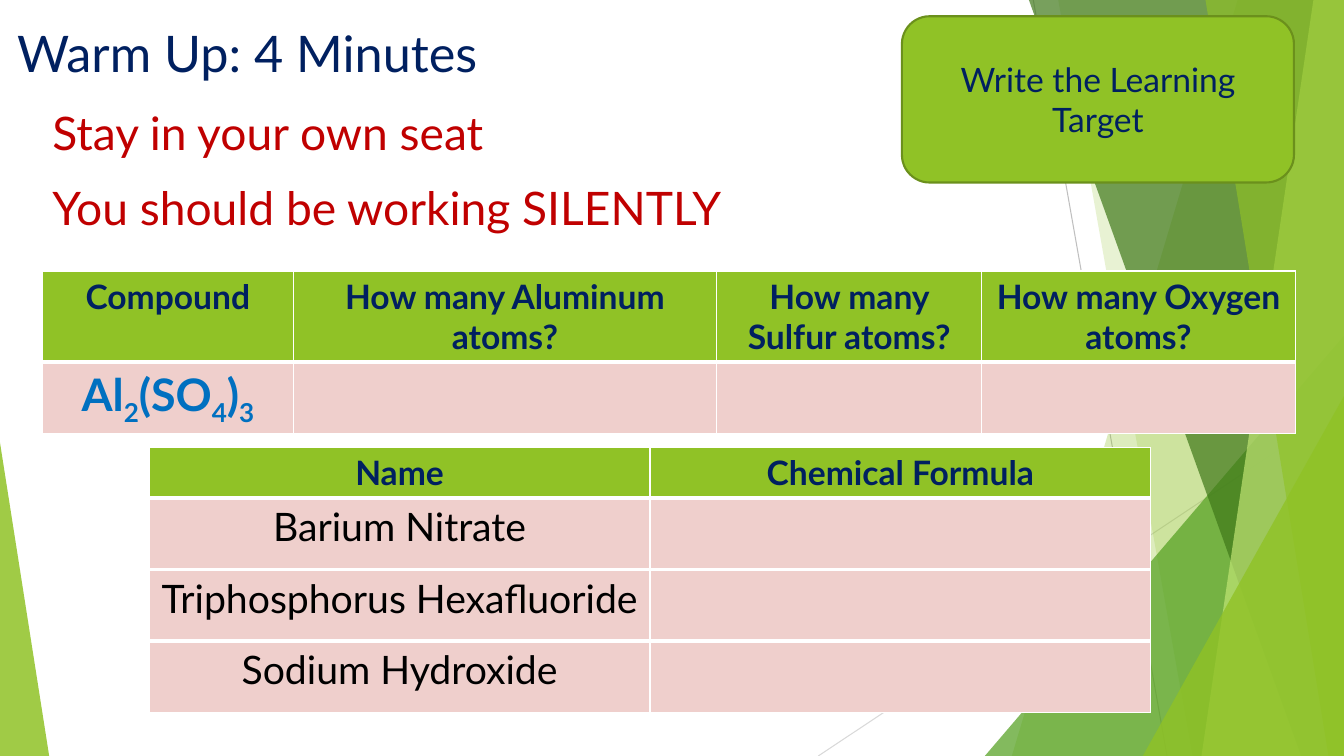
from dataclasses import dataclass

from lxml.etree import SubElement as Sub
from pptx import Presentation
from pptx.dml.color import RGBColor as Color
from pptx.enum.shapes import MSO_CONNECTOR as Link
from pptx.enum.shapes import MSO_SHAPE as Form
from pptx.enum.text import MSO_ANCHOR as Anchor
from pptx.enum.text import PP_ALIGN as Align
from pptx.oxml.ns import qn
from pptx.shapes.base import BaseShape as Shape
from pptx.slide import Slide
from pptx.table import _Cell as Cell
from pptx.text.text import TextFrame as Frame
from pptx.util import Cm, Pt

WIDTH, HEIGHT = 33.87, 19.05
FONT = "Lato"
WHITE = Color(255, 255, 255)
BLACK = Color(0, 0, 0)
NAVY = Color(0x00, 0x20, 0x60)
RED = Color(0xC0, 0x00, 0x00)
BLUE = Color(0x00, 0x70, 0xC0)
LIME = Color(0x90, 0xC2, 0x26)
OLIVE = Color(0x6B, 0x90, 0x1C)
GREEN = Color(0x54, 0xA0, 0x21)
FOREST = Color(0x3F, 0x78, 0x19)
PALE = Color(0xC0, 0xE4, 0x74)
PINK = Color(0xEF, 0xCF, 0xCC)
GREY = Color(0xBF, 0xBF, 0xBF)
SILVER = Color(0xD9, 0xD9, 0xD9)


@dataclass
class Line:
    start: tuple[float, float]
    end: tuple[float, float]
    color: Color


@dataclass
class Facet:
    top: float
    base: float
    color: Color
    alpha: int


@dataclass
class Wedge:
    left: float
    top: float
    width: float
    peak: float
    color: Color
    alpha: int


@dataclass
class Run:
    text: str
    size: float
    color: Color
    bold: bool = False
    sub: bool = False


@dataclass
class Label:
    left: float
    top: float
    width: float
    height: float
    run: Run


@dataclass
class Grid:
    left: float
    top: float
    widths: list[float]
    heights: list[float]
    rows: list[list[list[Run]]]


def head(text: str) -> list[Run]:
    return [Run(text, 24, NAVY, True)]


def name(text: str) -> list[Run]:
    return [Run(text, 28, BLACK)]


PARTS = [("Al", False), ("2", True), ("(SO", False), ("4", True), (")", False), ("3", True)]
SALT = [Run(text, 32, BLUE, True, sub) for text, sub in PARTS]

LINES = [
    Line((26.04, 0), (29.41, HEIGHT), GREY),
    Line((WIDTH, 10.24), (20.62, HEIGHT), SILVER),
]
PANES = [
    Facet(31.19, 25.5, LIME, 30),
    Facet(26.67, 30.05, LIME, 20),
    Wedge(24.82, 8.46, 9.05, 1, GREEN, 72),
    Facet(25.93, 32.79, FOREST, 70),
    Facet(33.1, 30.28, PALE, 70),
    Facet(30.38, 33.48, LIME, 65),
    Wedge(28.8, 9.98, 5.07, 1, LIME, 80),
    Wedge(0, 11.15, 1.24, 0, LIME, 85),
]
LABELS = [
    Label(0.18, 0.43, 22, 2, Run("Warm Up: 4 Minutes", 36, NAVY)),
    Label(1.07, 4.39, 18.5, 2.08, Run("You should be working SILENTLY", 33, RED)),
    Label(1.07, 2.51, 18.5, 2.08, Run("Stay in your own seat", 33, RED)),
]
TARGET = Label(22.73, 0.41, 9.88, 4.19, Run("Write the Learning Target", 24, NAVY))
GRIDS = [
    Grid(1.07, 6.83, [6.32, 10.67, 6.68, 7.9], [2.27, 1.79], [
        [head("Compound"), head("How many Aluminum atoms?"),
         head("How many Sulfur atoms?"), head("How many Oxygen atoms?")],
        [SALT, [], [], []],
    ]),
    Grid(3.76, 11.28, [12.62, 12.62], [1.27, 1.8, 1.8, 1.8], [
        [head("Name"), head("Chemical Formula")],
        [name("Barium Nitrate"), []],
        [name("Triphosphorus Hexafluoride"), []],
        [name("Sodium Hydroxide"), []],
    ]),
]


def write(frame: Frame, runs: list[Run], align: Align) -> None:
    frame.word_wrap = True
    para = frame.paragraphs[0]
    para.alignment = align
    for item in runs:
        run = para.add_run()
        run.text = item.text
        font = run.font
        font.name, font.size, font.bold = FONT, Pt(item.size), item.bold
        font.color.rgb = item.color
        if item.sub:
            run._r.get_or_add_rPr().set("baseline", "-25000")


def tint(shape: Shape, color: Color, alpha: int) -> None:
    shape.shadow.inherit = False
    shape.fill.solid()
    shape.fill.fore_color.rgb = color
    shape.line.fill.background()
    tone = shape._element.spPr.find(qn("a:solidFill"))[0]
    Sub(tone, qn("a:alpha")).set("val", str(alpha * 1000))


def draw_line(slide: Slide, line: Line) -> None:
    ends = [Cm(val) for val in line.start + line.end]
    link = slide.shapes.add_connector(Link.STRAIGHT, *ends)
    link.line.color.rgb = line.color
    link.line.width = Pt(0.75)
    Sub(link._element.spPr, qn("a:effectLst"))


def draw_facet(slide: Slide, facet: Facet) -> None:
    path = slide.shapes.build_freeform(Cm(facet.top), 0)
    spots = [(WIDTH, 0), (WIDTH, HEIGHT), (facet.base, HEIGHT)]
    path.add_line_segments([(Cm(x), Cm(y)) for x, y in spots])
    tint(path.convert_to_shape(), facet.color, facet.alpha)


def draw_wedge(slide: Slide, wedge: Wedge) -> None:
    shape = slide.shapes.add_shape(
        Form.ISOSCELES_TRIANGLE, Cm(wedge.left), Cm(wedge.top),
        Cm(wedge.width), Cm(HEIGHT - wedge.top))
    shape.adjustments[0] = wedge.peak
    tint(shape, wedge.color, wedge.alpha)


def draw_label(slide: Slide, label: Label) -> None:
    box = slide.shapes.add_textbox(
        Cm(label.left), Cm(label.top), Cm(label.width), Cm(label.height))
    write(box.text_frame, [label.run], Align.LEFT)


def draw_target(slide: Slide, label: Label) -> None:
    shape = slide.shapes.add_shape(
        Form.ROUNDED_RECTANGLE, Cm(label.left), Cm(label.top),
        Cm(label.width), Cm(label.height))
    tint(shape, LIME, 100)
    shape.line.color.rgb = OLIVE
    shape.line.width = Pt(1.5)
    shape.text_frame.vertical_anchor = Anchor.MIDDLE
    write(shape.text_frame, [label.run], Align.CENTER)


def edge(cell: Cell, top: float, base: float) -> None:
    props = cell._tc.get_or_add_tcPr()
    for side, width in (("L", 1), ("R", 1), ("T", top), ("B", base)):
        line = Sub(props, qn("a:ln" + side), w=str(Pt(width)))
        Sub(Sub(line, qn("a:solidFill")), qn("a:srgbClr"), val=str(WHITE))


def draw_grid(slide: Slide, grid: Grid) -> None:
    table = slide.shapes.add_table(
        len(grid.heights), len(grid.widths), Cm(grid.left), Cm(grid.top),
        Cm(sum(grid.widths)), Cm(sum(grid.heights))).table
    table.horz_banding = table.first_row = False
    for col, width in zip(table.columns, grid.widths):
        col.width = Cm(width)
    last = len(grid.rows) - 1
    for r, row in enumerate(grid.rows):
        table.rows[r].height = Cm(grid.heights[r])
        for c, runs in enumerate(row):
            cell = table.cell(r, c)
            edge(cell, 3 if r else 1, 3 if r < last else 1)
            cell.fill.solid()
            cell.fill.fore_color.rgb = PINK if r else LIME
            write(cell.text_frame, runs, Align.CENTER)


def main() -> None:
    deck = Presentation()
    deck.slide_width, deck.slide_height = Cm(WIDTH), Cm(HEIGHT)
    slide = deck.slides.add_slide(deck.slide_layouts[6])
    for line in LINES:
        draw_line(slide, line)
    for pane in PANES:
        if isinstance(pane, Facet):
            draw_facet(slide, pane)
        else:
            draw_wedge(slide, pane)
    draw_target(slide, TARGET)
    for label in LABELS:
        draw_label(slide, label)
    for grid in GRIDS:
        draw_grid(slide, grid)
    deck.save("out.pptx")


if __name__ == "__main__":
    main()
